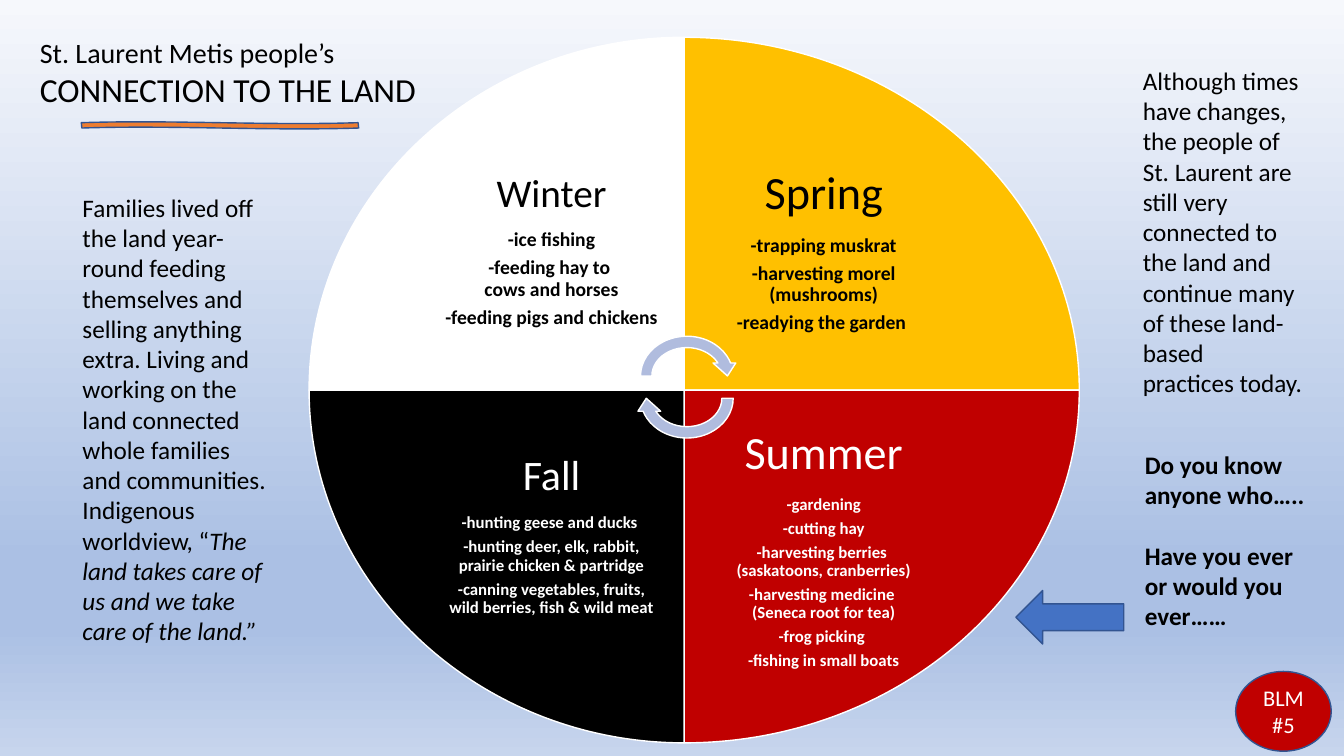
from copy import deepcopy

from lxml import etree
from pptx import Presentation
from pptx import util as u
from pptx.dml.color import RGBColor
from pptx.enum import shapes, text
from pptx.oxml.ns import qn

HUE = {"black": "000000", "white": "FFFFFF", "gold": "FFC000", "red": "C00000",
       "blue": "4472C4", "edge": "325491", "orange": "ED7D31", "lilac": "B0BCDE"}
SKY = [(0, "F6F8FC"), (74, "ABC0E4"), (83, "ABC0E4"), (100, "C7D5ED")]
KIND = shapes.MSO_SHAPE
MID = text.PP_ALIGN.CENTER

# Hub and radii of the season wheel, in cm
HUB = (17.24, 9.83)
WEST, EAST, TALL = 9.45, 9.96, 8.89
BEND = 0.55  # pull of a quarter curve

# Side across, side down, fill, ink, text top in cm, title, title size, list size, items
SEASONS = [
    (-1, -1, "white", "black", 3.44, "Winter", 28, 14,
     ["-ice fishing", "-feeding hay to \ncows and horses", "-feeding pigs and chickens"]),
    (1, -1, "gold", "black", 3.33, "Spring", 33, 14,
     ["-trapping muskrat", "-harvesting morel (mushrooms)", "-readying the garden\u00a0"]),
    (1, 1, "red", "white", 1.0, "Summer", 33, 12,
     ["-gardening", "-cutting hay", "-harvesting berries \n(saskatoons, cranberries)",
      "-harvesting medicine \n(Seneca root for tea)", "-frog picking ",
      "-fishing in small boats"]),
    (-1, 1, "black", "white", 1.62, "Fall", 30, 12,
     ["-hunting geese and ducks ", "-hunting deer, elk, rabbit, prairie chicken & partridge",
      "-canning vegetables, fruits, wild berries, fish & wild meat"]),
]


def rgb(name):
    return RGBColor.from_string(HUE[name])


def paint(shape, fill, line):
    shape.shadow.inherit = False
    shape.fill.solid()
    shape.fill.fore_color.rgb = rgb(fill)
    shape.line.color.rgb = rgb(line)
    shape.line.width = u.Pt(1)


def write(para, words, size, ink="black", bold=False, slant=False):
    """Add words run by run, with a line break at each newline."""
    for i, line in enumerate(words.split("\n")):
        if i:
            para.add_line_break()
        run = para.add_run()
        run.text = line
        font = run.font
        font.name, font.size = "Calibri", u.Pt(size)
        font.bold, font.italic = bold, slant
        font.color.rgb = rgb(ink)


def place(slide, kind, box, fill, line):
    shape = slide.shapes.add_shape(kind, *map(u.Cm, box))
    paint(shape, fill, line)
    return shape


def note(slide, box):
    frame = slide.shapes.add_textbox(*map(u.Cm, box)).text_frame
    frame.word_wrap = True
    return frame


def sky(slide):
    fill = slide.background.fill
    fill.gradient()
    fill.gradient_angle = 270
    stops = slide.element.find(".//" + qn("a:gsLst"))
    model = deepcopy(stops[0])
    for stop in list(stops):
        stops.remove(stop)
    for _ in SKY:
        stops.append(deepcopy(model))
    for stop, (spot, tint) in zip(fill.gradient_stops, SKY):
        stop.position = spot / 100
        stop.color.rgb = RGBColor.from_string(tint)


def header(slide, box):
    x, y, w, h = box
    title = slide.shapes.title
    title.left, title.top, title.width, title.height = map(u.Cm, box)
    frame = title.text_frame
    frame.word_wrap = True
    frame.auto_size = text.MSO_AUTO_SIZE.NONE
    frame.vertical_anchor = text.MSO_ANCHOR.TOP
    lines = [("St. Laurent Metis people’s", 20), ("CONNECTION TO THE LAND", 24)]
    for i, (words, size) in enumerate(lines):
        para = frame.add_paragraph() if i else frame.paragraphs[0]
        para.alignment = text.PP_ALIGN.LEFT
        write(para, words, size)
    # Underline
    wave = place(slide, KIND.WAVE, (x + 1.3, y + 2.3, 6.99, 0.18), "orange", "edge")
    wave.adjustments[0], wave.adjustments[1] = 0.125, 0.001


def sector(slide, across, down):
    """Quarter of the wheel: two straight sides and one curve."""
    x, y = HUB
    wide = across * (EAST if across > 0 else WEST)
    tall = down * TALL

    def spot(a, b):
        return u.Cm(x + a * wide), u.Cm(y + b * tall)

    side, pole = spot(1, 0), spot(0, 1)
    pen = slide.shapes.build_freeform(*side)
    pen.add_line_segments([pole, spot(0, 0), side], close=True)
    shape = pen.convert_to_shape()
    # Turn the outer side into a curve
    edge = shape.element.find(".//" + qn("a:lnTo"))
    curve = etree.Element(qn("a:cubicBezTo"))
    for px, py in [spot(1, BEND), spot(BEND, 1), pole]:
        etree.SubElement(curve, qn("a:pt"), x=str(px - shape.left), y=str(py - shape.top))
    edge.getparent().replace(edge, curve)
    return shape


def wedge(slide, season):
    across, down, fill, ink, top, name, big, small, items = season
    shape = sector(slide, across, down)
    paint(shape, fill, "white")

    # Season and its work
    frame = shape.text_frame
    frame.word_wrap = True
    frame.vertical_anchor = text.MSO_ANCHOR.TOP
    left, right = (0.66, 3.58) if across > 0 else (3.34, 0.57)
    frame.margin_left, frame.margin_right = u.Cm(left), u.Cm(right)
    frame.margin_top, frame.margin_bottom = u.Cm(top), 0
    for i, words in enumerate([name] + items):
        para = frame.add_paragraph() if i else frame.paragraphs[0]
        size = small if i else big
        para.alignment, para.line_spacing = MID, 0.9
        para.space_after = u.Pt(round(size * 0.35, 1))
        write(para, words, size, ink, bold=i > 0)


def wheel(slide):
    for season in SEASONS:
        wedge(slide, season)
    # Cycle arrows
    for y, turn in [(8.33, 0), (8.89, 180)]:
        arrow = place(slide, KIND.CIRCULAR_ARROW, (16, y, 2.62, 2.29), "lilac", "white")
        arrow.rotation = turn


def past(slide, box):
    para = note(slide, box).paragraphs[0]
    write(para, "Families lived off the land year-round feeding themselves and selling "
          "anything extra. Living and working on the land connected whole families "
          "and communities. Indigenous worldview, “", 18)
    write(para, "The land takes care of us and we take care of the land.”", 18, slant=True)


def today(slide, box):
    x, y, w, h = box
    write(note(slide, box).paragraphs[0],
          "Although times have changes, the people of St. Laurent are still very connected "
          "to the land and continue many of these land-based\npractices today.", 18)
    # Questions
    frame = note(slide, (x + 0.05, y + 9.68, 5.03, 4.88))
    write(frame.paragraphs[0], "Do you know anyone who…..", 18, bold=True)
    para = frame.add_paragraph()
    para.space_before = u.Pt(21.5)
    write(para, "Have you ever \nor would you ever……", 18, bold=True)
    place(slide, KIND.LEFT_ARROW, (x - 2.95, y + 13.36, 2.72, 1.35), "blue", "edge")


def badge(slide, box):
    frame = place(slide, KIND.OVAL, box, "red", "edge").text_frame
    frame.word_wrap = True
    frame.vertical_anchor = text.MSO_ANCHOR.MIDDLE
    para = frame.paragraphs[0]
    para.alignment, para.space_after = MID, u.Pt(6)
    write(para, "BLM#5", 16, "white")


def main():
    deck = Presentation()
    deck.slide_width, deck.slide_height = u.Cm(33.87), u.Cm(19.05)
    slide = deck.slides.add_slide(deck.slide_layouts[5])
    sky(slide)
    header(slide, (0.75, 0.77, 11.99, 2.9))
    wheel(slide)
    past(slide, (1.83, 4.72, 5.28, 11.79))
    today(slide, (28.55, 1.52, 4.57, 8.71))
    badge(slide, (31.14, 16.92, 2.41, 2.01))
    deck.save("out.pptx")


if __name__ == "__main__":
    main()
